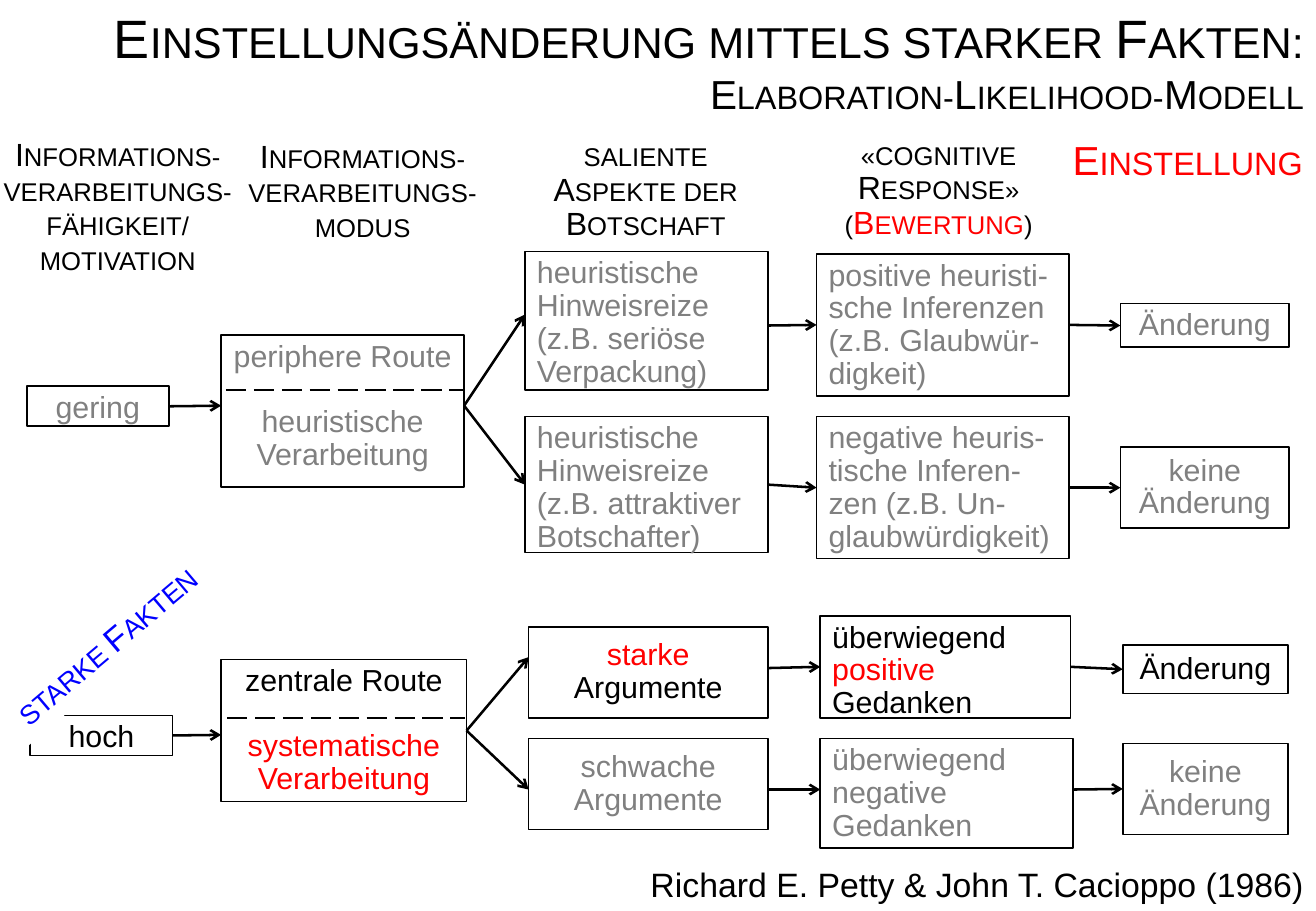
from dataclasses import dataclass

from lxml.etree import SubElement
from pptx import Presentation
from pptx.dml.color import RGBColor
from pptx.enum.dml import MSO_LINE_DASH_STYLE as Dash
from pptx.enum.shapes import MSO_CONNECTOR as Connector, MSO_SHAPE as Shape
from pptx.enum.text import MSO_ANCHOR as Anchor, PP_ALIGN as Align
from pptx.oxml.ns import qn
from pptx.util import Emu, Pt

PX = 9144  # 100 px to the inch
LEFT, RIGHT = 1, 3  # connection sites of a rectangle
JOIN_TOLERANCE = 2


@dataclass(frozen=True)
class Theme:
    font: str = "Arial"
    black: str = "000000"
    grey: str = "808080"
    red: str = "FF0000"
    blue: str = "0000FF"
    white: str = "FFFFFF"
    title: int = 32
    subtitle: int = 24
    heading: int = 19
    body: int = 18
    note: int = 20
    box_line: float = 1
    arrow_line: float = 1.5
    tight: float = 0.9
    route_gap: int = 19


class Board:
    def __init__(self, slide, theme):
        self.slide = slide
        self.theme = theme

    def add_text(self, shape, paragraphs, size, align=Align.CENTER, anchor=Anchor.MIDDLE,
                 spacing=None, gap=0, small_caps=False):
        """Each paragraph is a list of (text, colour) or (text, colour, size) runs."""
        frame = shape.text_frame
        frame.word_wrap = True
        frame.vertical_anchor = anchor
        for index, runs in enumerate(paragraphs):
            paragraph = frame.add_paragraph() if index else frame.paragraphs[0]
            paragraph.alignment = align
            paragraph.line_spacing = spacing
            if index and gap:
                paragraph.space_before = Pt(gap)
            for text, color, *own_size in runs:
                if text == "\n":
                    paragraph.add_line_break()
                    continue
                run = paragraph.add_run()
                run.text = text
                run.font.name = self.theme.font
                run.font.size = Pt(own_size[0] if own_size else size)
                run.font.color.rgb = RGBColor.from_string(color)
                if small_caps:
                    run.font._element.set("cap", "small")

    def label(self, at, paragraphs, size, **style):
        shape = self.slide.shapes.add_textbox(*(Emu(value * PX) for value in at))
        self.add_text(shape, paragraphs, size, **style)
        return shape

    def box(self, at, paragraphs, **style):
        shape = self.slide.shapes.add_shape(Shape.RECTANGLE, *(Emu(value * PX) for value in at))
        shape.shadow.inherit = False
        shape.fill.background()
        shape.line.color.rgb = RGBColor.from_string(self.theme.black)
        shape.line.width = Pt(self.theme.box_line)
        self.add_text(shape, paragraphs, self.theme.body, spacing=self.theme.tight, **style)
        return shape

    def line(self, x1, y1, x2, y2):
        connector = self.slide.shapes.add_connector(
            Connector.STRAIGHT, *(Emu(value * PX) for value in (x1, y1, x2, y2)))
        connector.line.color.rgb = RGBColor.from_string(self.theme.black)
        connector.line.width = Pt(self.theme.arrow_line)
        SubElement(connector._element.spPr, qn("a:effectLst"))
        return connector

    def divider(self, x1, x2, y):
        self.line(x1, y, x2, y).line.dash_style = Dash.LONG_DASH

    def arrow(self, start, end, y1, y2=None):
        """Run from the right side of start to the left side of end, joined where it meets a middle."""
        y2 = y2 or y1
        connector = self.line((start.left + start.width) // PX, y1, end.left // PX, y2)
        SubElement(connector.get_or_add_ln(), qn("a:tailEnd"), type="arrow")
        for shape, y, join, site in ((start, y1, connector.begin_connect, RIGHT),
                                     (end, y2, connector.end_connect, LEFT)):
            if abs(shape.top + shape.height / 2 - y * PX) <= JOIN_TOLERANCE * PX:
                join(shape, site)


def draw_headings(board):
    theme = board.theme
    black, red = theme.black, theme.red
    board.label((0, 1, 1083, 98), [[
        ("Einstellungsänderung mittels starker Fakten:", black), ("\n", black),
        ("Elaboration-Likelihood-Modell", black, theme.subtitle)]],
        theme.title, align=Align.RIGHT, small_caps=True)
    headings = [
        ((-25, 110, 244, 123), [[("Informations-verarbeitungs-fähigkeit/", black)],
                                [("motivation", black)]]),
        ((186, 110, 225, 97), [[("Informations-verarbeitungs-modus", black)]]),
        ((440, 109, 183, 96), [[("saliente Aspekte der Botschaft", black)]]),
        ((674, 107, 197, 98), [[("«cognitive Response»", black), ("\n", black), ("(", black),
                                ("Bewertung", red), (")", black)]]),
        ((872, 107, 211, 54), [[("Einstellung", red, theme.subtitle)]]),
    ]
    for at, paragraphs in headings:
        board.label(at, paragraphs, theme.heading, spacing=theme.tight, small_caps=True)


def draw_peripheral_route(board):
    grey = board.theme.grey
    top_left = {"align": Align.LEFT, "anchor": Anchor.TOP}
    low = board.box((22, 318, 117, 33), [[("gering", grey)]], anchor=Anchor.TOP)
    route = board.box((182, 276, 200, 125),
                      [[("periphere Route", grey)], [("heuristische Verarbeitung", grey)]],
                      anchor=Anchor.TOP, gap=board.theme.route_gap)
    board.divider(186, 382, 321)
    board.arrow(low, route, 334)
    rows = [
        (268, 259, (432, 207, 200, 114), "heuristische Hinweisreize (z.B. seriöse Verpackung)",
         (672, 209, 208, 117), "positive heuristi-sche Inferenzen (z.B. Glaubwür-digkeit)",
         (922, 250, 139, 36), "Änderung"),
        (401, 401, (432, 343, 200, 112), "heuristische Hinweisreize (z.B. attraktiver Botschafter)",
         (672, 343, 208, 117), "negative heuris-tische Inferen-zen (z.B. Un-glaubwürdigkeit)",
         (922, 368, 139, 67), "keine Änderung"),
    ]
    for y, cue_y, cue_at, cue_text, response_at, response_text, attitude_at, attitude_text in rows:
        cue = board.box(cue_at, [[(cue_text, grey)]], **top_left)
        response = board.box(response_at, [[(response_text, grey)]], **top_left)
        attitude = board.box(attitude_at, [[(attitude_text, grey)]])
        board.arrow(route, cue, 334, cue_y)
        board.arrow(cue, response, y)
        board.arrow(response, attitude, y)


def draw_central_route(board):
    theme = board.theme
    black, grey, red = theme.black, theme.grey, theme.red
    high = board.box((25, 589, 117, 33), [[("hoch", black)]], anchor=Anchor.TOP)
    route = board.box((182, 543, 202, 117),
                      [[("zentrale Route", black)], [("systematische Verarbeitung", red)]],
                      anchor=Anchor.TOP, gap=theme.route_gap)
    board.divider(187, 383, 591)
    board.arrow(high, route, 605)
    rows = [
        (550, 541, (435, 516, 197, 75), [("starke", red), (" Argumente", black)],
         (675, 507, 206, 84), [("überwiegend ", black), ("positive ", red), ("Gedanken", black)],
         (924, 531, 136, 40), [("Änderung", black)]),
        (650, 650, (435, 608, 197, 75), [("schwache Argumente", grey)],
         (675, 608, 208, 90), [("überwiegend negative Gedanken", grey)],
         (924, 612, 136, 75), [("keine Änderung", grey)]),
    ]
    for y, argument_y, argument_at, argument_runs, thought_at, thought_runs, attitude_at, attitude_runs in rows:
        argument = board.box(argument_at, [argument_runs])
        thought = board.box(thought_at, [thought_runs], align=Align.LEFT, anchor=Anchor.TOP)
        attitude = board.box(attitude_at, [attitude_runs])
        board.arrow(route, argument, 600, argument_y)
        board.arrow(argument, thought, y)
        board.arrow(thought, attitude, y)


def draw_notes(board):
    theme = board.theme
    board.label((375, 706, 708, 44), [[("Richard E. Petty & John T. Cacioppo (1986)", theme.black)]],
                theme.note, align=Align.RIGHT, anchor=Anchor.TOP)
    facts = board.label((-17, 509, 209, 44), [[("starke Fakten", theme.blue)]],
                        theme.note, anchor=Anchor.TOP, small_caps=True)
    facts.fill.solid()
    facts.fill.fore_color.rgb = RGBColor.from_string(theme.white)
    facts.rotation = 319.8


def main():
    presentation = Presentation()
    presentation.slide_width = Emu(1083 * PX)
    presentation.slide_height = Emu(750 * PX)
    slide = presentation.slides.add_slide(presentation.slide_layouts[6])
    board = Board(slide, Theme())
    draw_headings(board)
    draw_peripheral_route(board)
    draw_central_route(board)
    draw_notes(board)
    presentation.save("out.pptx")


if __name__ == "__main__":
    main()
